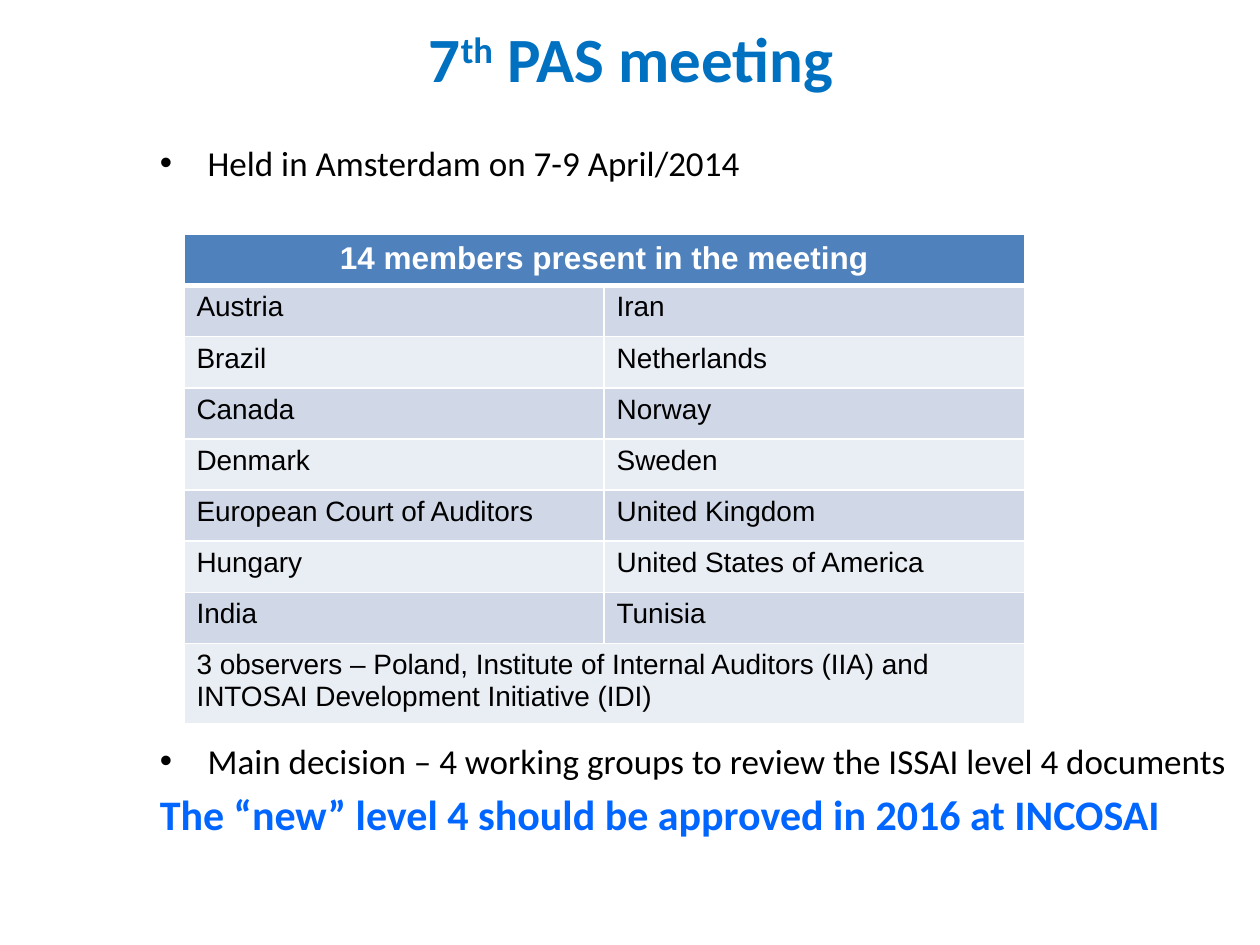
from dataclasses import dataclass

from lxml.etree import SubElement
from pptx import Presentation
from pptx.dml.color import RGBColor
from pptx.enum.text import MSO_ANCHOR, PP_ALIGN
from pptx.oxml import parse_xml
from pptx.oxml.ns import nsdecls, qn
from pptx.util import Inches, Pt

COLORS = {
    "title": "0070C0",
    "text": "000000",
    "highlight": "0066FF",
    "header": "4F81BD",
    "band_dark": "D0D8E8",
    "band_light": "E9EDF4",
    "white": "FFFFFF",
}
MEMBERS = [
    ("Austria", "Iran"),
    ("Brazil", "Netherlands"),
    ("Canada", "Norway"),
    ("Denmark", "Sweden"),
    ("European Court of Auditors", "United Kingdom"),
    ("Hungary", "United States of America"),
    ("India", "Tunisia"),
]
HEADING = "14 members present in the meeting"
OBSERVERS = ("3 observers – Poland, Institute of Internal Auditors (IIA) and "
             "INTOSAI Development Initiative (IDI)")


@dataclass
class TextStyle:
    size: int
    color: str = "text"
    bold: bool = False
    name: str = "Calibri"


@dataclass
class Line:
    text: str
    style: TextStyle
    bullet: bool = False


TITLE = TextStyle(36, "title", True)
BODY = TextStyle(20)
HIGHLIGHT = TextStyle(24, "highlight", True)
TABLE_HEADER = TextStyle(18, "white", True, "Arial")
TABLE_BODY = TextStyle(16, name="Arial")


def add_run(paragraph, text: str, style: TextStyle):
    run = paragraph.add_run()
    run.text = text
    formats = {"size": Pt(style.size), "bold": style.bold, "name": style.name}
    for attribute, value in formats.items():
        setattr(run.font, attribute, value)
    run.font.color.rgb = RGBColor.from_string(COLORS[style.color])
    return run


def place(shape, left: float, top: float, width: float, height: float) -> None:
    box = {"left": left, "top": top, "width": width, "height": height}
    for attribute, value in box.items():
        setattr(shape, attribute, Inches(value))


def add_bullet(paragraph) -> None:
    properties = paragraph._p.get_or_add_pPr()
    properties.set("marL", str(Inches(0.38)))
    properties.set("indent", str(-Inches(0.38)))
    SubElement(properties, qn("a:buFont")).set("typeface", "Arial")
    SubElement(properties, qn("a:buChar")).set("char", "•")


def add_title(slide) -> None:
    title = slide.shapes.title
    place(title, 0.51, 0, 9, 0.91)
    title.text_frame.vertical_anchor = MSO_ANCHOR.MIDDLE
    paragraph = title.text_frame.paragraphs[0]
    paragraph.alignment = PP_ALIGN.CENTER
    add_run(paragraph, "7", TITLE)
    ordinal = add_run(paragraph, "th", TITLE)
    ordinal.font._element.set("baseline", "30000")
    add_run(paragraph, " PAS meeting", TITLE)


def add_text(slide, top: float, height: float, lines: list[Line]) -> None:
    shape = slide.shapes.add_textbox(0, 0, 0, 0)
    place(shape, 1.17, top, 8.83, height)
    frame = shape.text_frame
    frame.word_wrap = True
    for index, line in enumerate(lines):
        paragraph = frame.add_paragraph() if index else frame.paragraphs[0]
        if line.bullet:
            add_bullet(paragraph)
        if index:
            paragraph.space_before = Pt(4)
        add_run(paragraph, line.text, line.style)


def format_cell(cell, fill: str, top: int = 1, bottom: int = 1) -> None:
    """Fill the cell and give it white borders, with widths in points."""
    cell.fill.solid()
    cell.fill.fore_color.rgb = RGBColor.from_string(COLORS[fill])
    properties = cell._tc.get_or_add_tcPr()
    widths = {"lnL": 1, "lnR": 1, "lnT": top, "lnB": bottom}
    for index, (side, width) in enumerate(widths.items()):
        properties.insert(index, parse_xml(
            f'<a:{side} {nsdecls("a")} w="{Pt(width)}"><a:solidFill>'
            f'<a:srgbClr val="{COLORS["white"]}"/></a:solidFill></a:{side}>'))


def add_members_table(slide) -> None:
    rows = [(HEADING, ""), *MEMBERS, (OBSERVERS, "")]
    last = len(rows) - 1
    height, last_height = 3.88, 0.63
    table = slide.shapes.add_table(
        len(rows), 2, Inches(1.46), Inches(1.86), Inches(6.67), Inches(height)).table
    for row_index, texts in enumerate(rows):
        is_header = row_index == 0
        row_height = last_height if row_index == last else (height - last_height) / last
        table.rows[row_index].height = Inches(row_height)
        band = "band_dark" if row_index % 2 else "band_light"
        for column_index, text in enumerate(texts):
            cell = table.cell(row_index, column_index)
            format_cell(cell, "header" if is_header else band,
                        top=3 if row_index == 1 else 1, bottom=3 if is_header else 1)
            if text:
                paragraph = cell.text_frame.paragraphs[0]
                paragraph.alignment = PP_ALIGN.CENTER if is_header else PP_ALIGN.LEFT
                add_run(paragraph, text, TABLE_HEADER if is_header else TABLE_BODY)
    for row_index in (0, last):
        table.cell(row_index, 0).merge(table.cell(row_index, 1))


def main() -> None:
    presentation = Presentation()
    presentation.slide_width = Inches(10)
    presentation.slide_height = Inches(7.5)
    slide = presentation.slides.add_slide(presentation.slide_layouts[5])
    add_title(slide)
    add_text(slide, 1.07, 0.45, [Line("Held in Amsterdam on 7-9 April/2014", BODY, True)])
    add_members_table(slide)
    add_text(slide, 5.82, 1.08, [
        Line("Main decision – 4 working groups to review the ISSAI level 4 documents",
             BODY, True),
        Line("The “new” level 4 should be approved in 2016 at INCOSAI", HIGHLIGHT),
    ])
    presentation.save("out.pptx")


if __name__ == "__main__":
    main()
